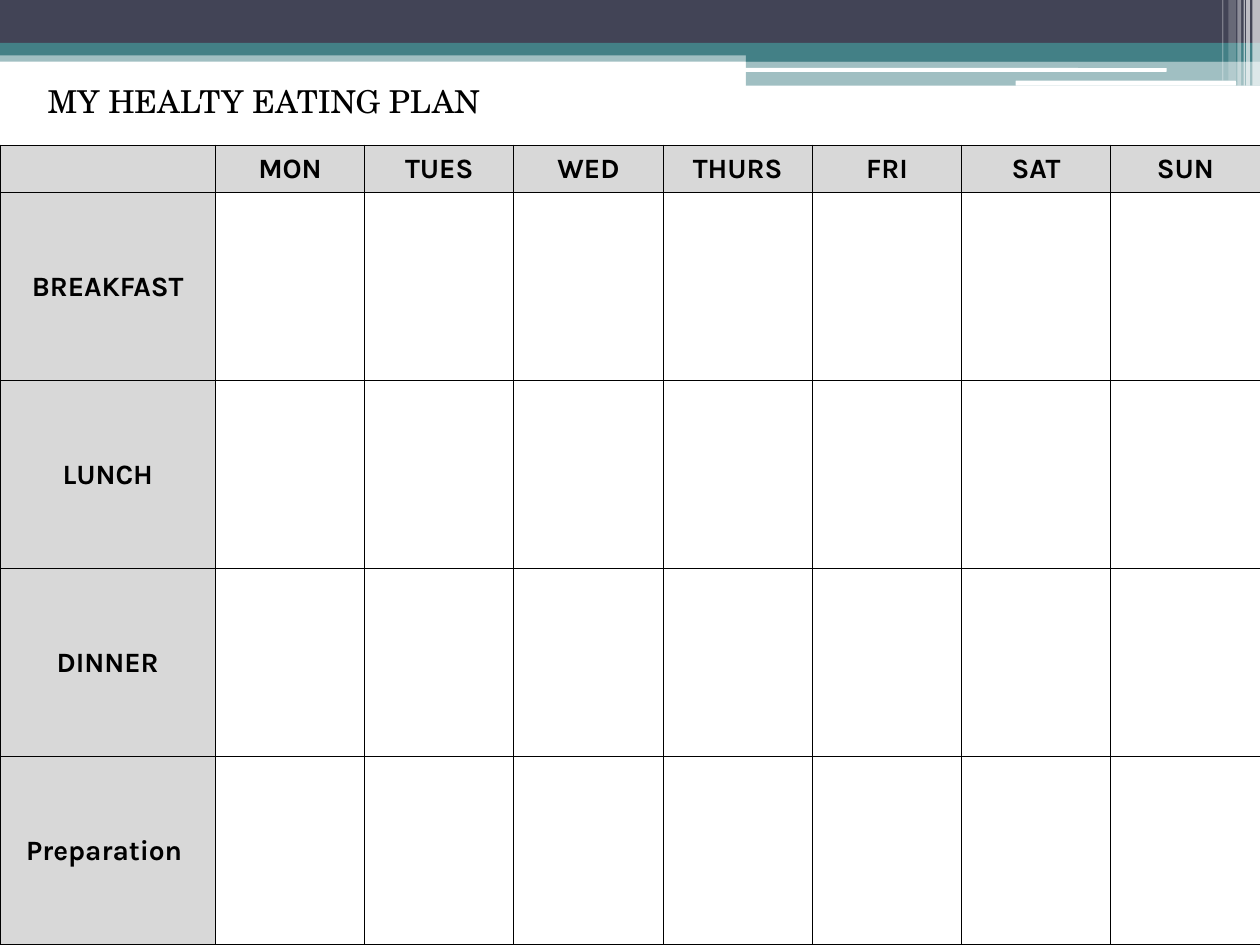
from lxml import etree
from pptx import Presentation
from pptx.dml.color import RGBColor
from pptx.enum.shapes import MSO_SHAPE
from pptx.enum.text import MSO_ANCHOR, MSO_AUTO_SIZE, PP_ALIGN
from pptx.oxml import parse_xml
from pptx.oxml.ns import nsdecls, qn
from pptx.util import Inches, Pt

RECT, ROUNDED = MSO_SHAPE.RECTANGLE, MSO_SHAPE.ROUNDED_RECTANGLE
MIDDLE, CENTER = MSO_ANCHOR.MIDDLE, PP_ALIGN.CENTER
GROW = MSO_AUTO_SIZE.SHAPE_TO_FIT_TEXT

SLATE = RGBColor(0x42, 0x44, 0x56)
TEAL = RGBColor(0x43, 0x80, 0x86)
WHITE = RGBColor(0xFF, 0xFF, 0xFF)
BLACK = RGBColor(0x00, 0x00, 0x00)
GREY = RGBColor(0xD8, 0xD8, 0xD8)

UNIT = Inches(0.01)
COLUMNS, ROWS = 1000, 750
BANNER_BOX = (0, 0, COLUMNS, 68)
TITLE_BOX = (28, 60, 472, 40)
PLAN_BOX = (0, 115, COLUMNS, 635)
MEAL_COLUMN, DAY_ROW = 171, 38

DAYS = ["MON", "TUES", "WED", "THURS", "FRI", "SAT", "SUN"]
MEALS = ["BREAKFAST", "LUNCH", "DINNER", "Preparation "]

BANDS = [
    (0, 40, 1000, 9, RECT, TEAL, 50),
    (0, 0, 1000, 34, RECT, SLATE, 100),
    (0, 34, 1000, 10, RECT, TEAL, 100),
    (592, 39, 408, 10, RECT, TEAL, 100),
    (592, 48, 408, 20, RECT, TEAL, 50),
    (591, 54, 335, 3, ROUNDED, WHITE, 100),
    (806, 64, 175, 4, ROUNDED, WHITE, 100),
]
STRIPES = [
    (994, 6, 68, 65),
    (989, 3, 68, 65),
    (987, 1, 68, 60),
    (982, 3, 68, 40),
    (975, 6, 64, 20),
    (970, 1, 64, 30),
]
LABEL_FONT = {"name": "Karla", "size": Pt(16), "bold": True}
TITLE_FONT = {"name": "TeX Gyre Schola", "size": Pt(18), "bold": False}
CELL_FORMAT = {
    "margin_left": UNIT,
    "margin_right": UNIT,
    "margin_top": UNIT,
    "margin_bottom": 0,
    "vertical_anchor": MIDDLE,
}


def apply_format(target, values):
    """Set each named attribute on the target."""
    for name, value in values.items():
        setattr(target, name, value)


def write(paragraph, wording, font):
    """Add black wording in the given font."""
    run = paragraph.add_run()
    run.text = wording
    apply_format(run.font, font)
    run.font.color.rgb = BLACK


def add_band(slide, box, preset, color, opacity):
    """Draw one borderless band with the given opacity in percent."""
    band = slide.shapes.add_shape(preset, *(UNIT * length for length in box))
    band.shadow.inherit = False
    band.line.fill.background()
    band.fill.solid()
    band.fill.fore_color.rgb = color
    if opacity < 100:
        tint = band.fill._xPr.find(qn("a:solidFill"))[0]
        etree.SubElement(tint, qn("a:alpha"), val=str(opacity * 1000))


def add_banner(slide, box):
    """Draw the layered banner and its fading stripes."""
    left, top, _, _ = box
    stripes = [(x, 0, width, height, RECT, WHITE, opacity)
               for x, width, height, opacity in STRIPES]
    for x, y, width, height, preset, color, opacity in BANDS + stripes:
        add_band(slide, (left + x, top + y, width, height), preset, color, opacity)


def add_title(slide, box):
    """Write the heading of the plan."""
    frame = slide.shapes.add_textbox(*(UNIT * length for length in box)).text_frame
    apply_format(frame, {"word_wrap": True, "auto_size": GROW})
    write(frame.paragraphs[0], "MY HEALTY EATING PLAN", TITLE_FONT)


def outline_cell(cell):
    """Rule all four sides of a cell with a thin black line."""
    properties = cell._tc.get_or_add_tcPr()
    for position, side in enumerate(("lnL", "lnR", "lnT", "lnB")):
        properties.insert(position, parse_xml(
            f'<a:{side} {nsdecls("a")} w="{Pt(0.5)}"><a:solidFill>'
            f'<a:srgbClr val="{BLACK}"/></a:solidFill></a:{side}>'))


def add_plan(slide, box):
    """Build the table of meals by weekday."""
    _, _, width, height = box
    labels = [["", *DAYS]] + [[meal] + [""] * len(DAYS) for meal in MEALS]
    plan = slide.shapes.add_table(
        len(labels), len(labels[0]), *(UNIT * length for length in box)).table
    apply_format(plan, {"first_row": False, "horz_banding": False})
    for index, column in enumerate(plan.columns):
        share = (width - MEAL_COLUMN) / len(DAYS) if index else MEAL_COLUMN
        column.width = round(UNIT * share)
    for index, row in enumerate(plan.rows):
        share = (height - DAY_ROW) / len(MEALS) if index else DAY_ROW
        row.height = round(UNIT * share)
    for r, row_labels in enumerate(labels):
        for c, label in enumerate(row_labels):
            cell = plan.cell(r, c)
            apply_format(cell, CELL_FORMAT)
            if r == 0 or c == 0:
                cell.fill.solid()
                cell.fill.fore_color.rgb = GREY
            else:
                cell.fill.background()
            outline_cell(cell)
            if label:
                paragraph = cell.text_frame.paragraphs[0]
                paragraph.alignment = CENTER
                write(paragraph, label, LABEL_FONT)


def main():
    """Build and save the meal plan slide."""
    deck = Presentation()
    deck.slide_width, deck.slide_height = UNIT * COLUMNS, UNIT * ROWS
    slide = deck.slides.add_slide(deck.slide_layouts[6])
    add_banner(slide, BANNER_BOX)
    add_plan(slide, PLAN_BOX)
    add_title(slide, TITLE_BOX)
    deck.save("out.pptx")


if __name__ == "__main__":
    main()
